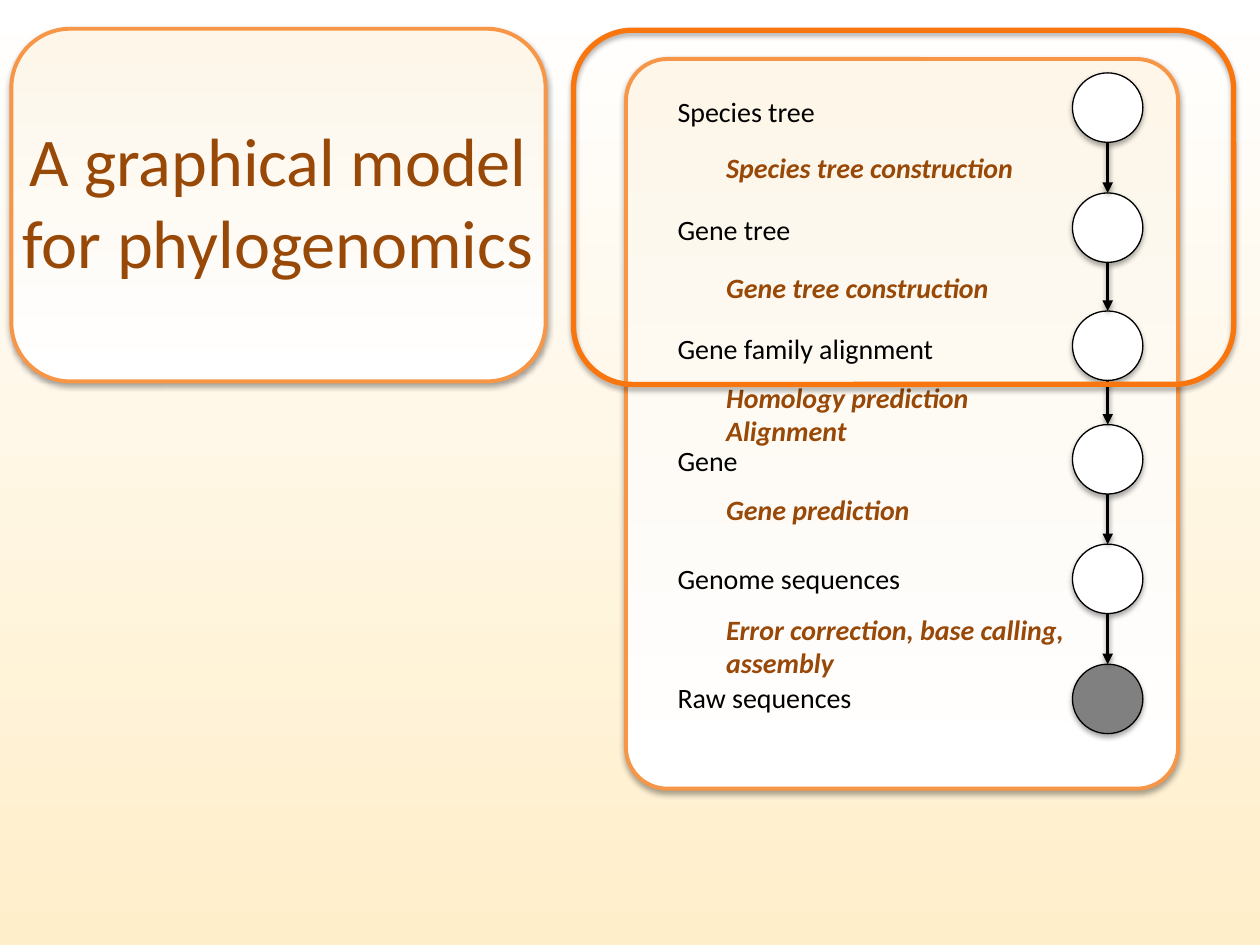
from lxml.etree import SubElement
from pptx import Presentation
from pptx.dml.color import RGBColor
from pptx.enum.shapes import MSO_CONNECTOR, MSO_SHAPE
from pptx.enum.text import MSO_ANCHOR, MSO_AUTO_SIZE, PP_ALIGN
from pptx.oxml.ns import qn
from pptx.util import Cm, Pt

COLORS = {
    "white": "FFFFFF", "black": "000000", "observed": "808080",
    "cream": "FDF6E9", "sand": "FFEECA", "brown": "984807",
    "border": "F79646", "frame": "F9760E",
}
NODE_W, NODE_H = 1.42, 1.4
NODE_LEFT = 21.62
# variable, top of its node, top of its label
VARIABLES = [
    ("Species tree", 1.47, 1.78),
    ("Gene tree", 3.89, 4.17),
    ("Gene family alignment", 6.27, 6.55),
    ("Gene", 8.56, 8.81),
    ("Genome sequences", 10.97, 11.2),
    ("Raw sequences", 13.39, 13.59),
]
# inference step between two variables, top of its text
STEPS = [
    (["Species tree construction"], 2.92),
    (["Gene tree construction"], 5.33),
    (["Homology prediction", "Alignment"], 7.54),
    (["Gene prediction"], 9.8),
    (["Error correction, base calling, assembly"], 12.22),
]


def rgb(name):
    return RGBColor.from_string(COLORS[name])


def cms(*lengths):
    return [Cm(v) for v in lengths]


def fade(fill, start, end, angle):
    """Two-colour gradient; the angle counts anticlockwise."""
    fill.gradient()
    fill.gradient_angle = angle
    for stop, name, position in zip(fill.gradient_stops, (start, end), (0, 1)):
        stop.color.rgb = rgb(name)
        stop.position = position


class Deck:
    font = "Calibri"
    text_size = 16

    def __init__(self, prs):
        self.s = prs.slides.add_slide(prs.slide_layouts[5])
        fade(self.s.background.fill, "white", "sand", 270)

    def style_font(self, p, size, color, strong=False):
        f = p.font
        f.name, f.size = self.font, Pt(size)
        f.color.rgb = rgb(color)
        if strong:
            f.bold = f.italic = True

    def drop_shadow(self, effects, alpha, dist):
        shadow = SubElement(effects, qn("a:outerShdw"), blurRad=str(Pt(3.1)),
                            dist=str(Pt(dist)), dir="5400000", rotWithShape="0")
        color = SubElement(shadow, qn("a:srgbClr"), val=COLORS["black"])
        SubElement(color, qn("a:alpha"), val=str(alpha * 1000))

    def shape(self, kind, box, line, width):
        sp = self.s.shapes.add_shape(kind, *cms(*box))
        sp.shadow.inherit = False
        sp.line.color.rgb = rgb(line)
        sp.line.width = Pt(width)
        self.drop_shadow(sp._element.spPr.find(qn("a:effectLst")), 35, 1.8)
        return sp

    def panel(self, box, radius=0.167):
        sp = self.shape(MSO_SHAPE.ROUNDED_RECTANGLE, box, "border", 2.25)
        sp.adjustments[0] = radius
        fade(sp.fill, "white", "cream", 90)

    def frame(self, box):
        sp = self.shape(MSO_SHAPE.ROUNDED_RECTANGLE, box, "frame", 3)
        sp.fill.background()

    def node(self, top, fill):
        sp = self.shape(MSO_SHAPE.OVAL, (NODE_LEFT, top, NODE_W, NODE_H), "black", 0.75)
        sp.fill.solid()
        sp.fill.fore_color.rgb = rgb(fill)

    def arrow(self, top, bottom):
        x = NODE_LEFT + NODE_W / 2
        line = self.s.shapes.add_connector(MSO_CONNECTOR.STRAIGHT, *cms(x, top, x, bottom))
        line.line.color.rgb = rgb("black")
        line.line.width = Pt(2)
        SubElement(line.line._get_or_add_ln(), qn("a:tailEnd"), type="triangle")
        effects = SubElement(line._element.spPr, qn("a:effectLst"))
        self.drop_shadow(effects, 38, 1.6)

    def title(self, text, box):
        sp = self.s.shapes.title
        sp.left, sp.top, sp.width, sp.height = cms(*box)
        self.s.shapes._spTree.append(sp._element)  # in front of its panel
        tf = sp.text_frame
        tf.text = text
        tf.word_wrap = True
        tf.auto_size = MSO_AUTO_SIZE.NONE
        tf.vertical_anchor = MSO_ANCHOR.MIDDLE
        p = tf.paragraphs[0]
        p.alignment = PP_ALIGN.CENTER
        self.style_font(p, 39, "brown")

    def text(self, lines, box, color, strong=False):
        tf = self.s.shapes.add_textbox(*cms(*box)).text_frame
        tf.word_wrap = True
        tf.auto_size = MSO_AUTO_SIZE.SHAPE_TO_FIT_TEXT
        tf.text = "\n".join(lines)
        for p in tf.paragraphs:
            self.style_font(p, self.text_size, color, strong)


def main():
    prs = Presentation()
    prs.slide_width, prs.slide_height = cms(25.4, 19.05)
    deck = Deck(prs)

    deck.panel((0.23, 0.58, 10.77, 7.11))
    deck.title("A graphical model for phylogenomics", (-0.2, 0.58, 11.61, 6.91))

    deck.panel((12.62, 1.19, 11.13, 14.71), 0.075)
    for name, node_top, label_top in VARIABLES:
        observed = name == "Raw sequences"
        deck.node(node_top, "observed" if observed else "white")
        deck.text([name], (13.41, label_top, 6.99, 0.94), "black")
    for (_, upper, _), (_, lower, _) in zip(VARIABLES, VARIABLES[1:]):
        deck.arrow(upper + NODE_H, lower)
    for lines, top in STEPS:
        deck.text(lines, (14.39, top, 7.92, 0.94), "brown", strong=True)

    deck.frame((11.56, 0.61, 13.31, 7.14))
    prs.save("out.pptx")


if __name__ == "__main__":
    main()
